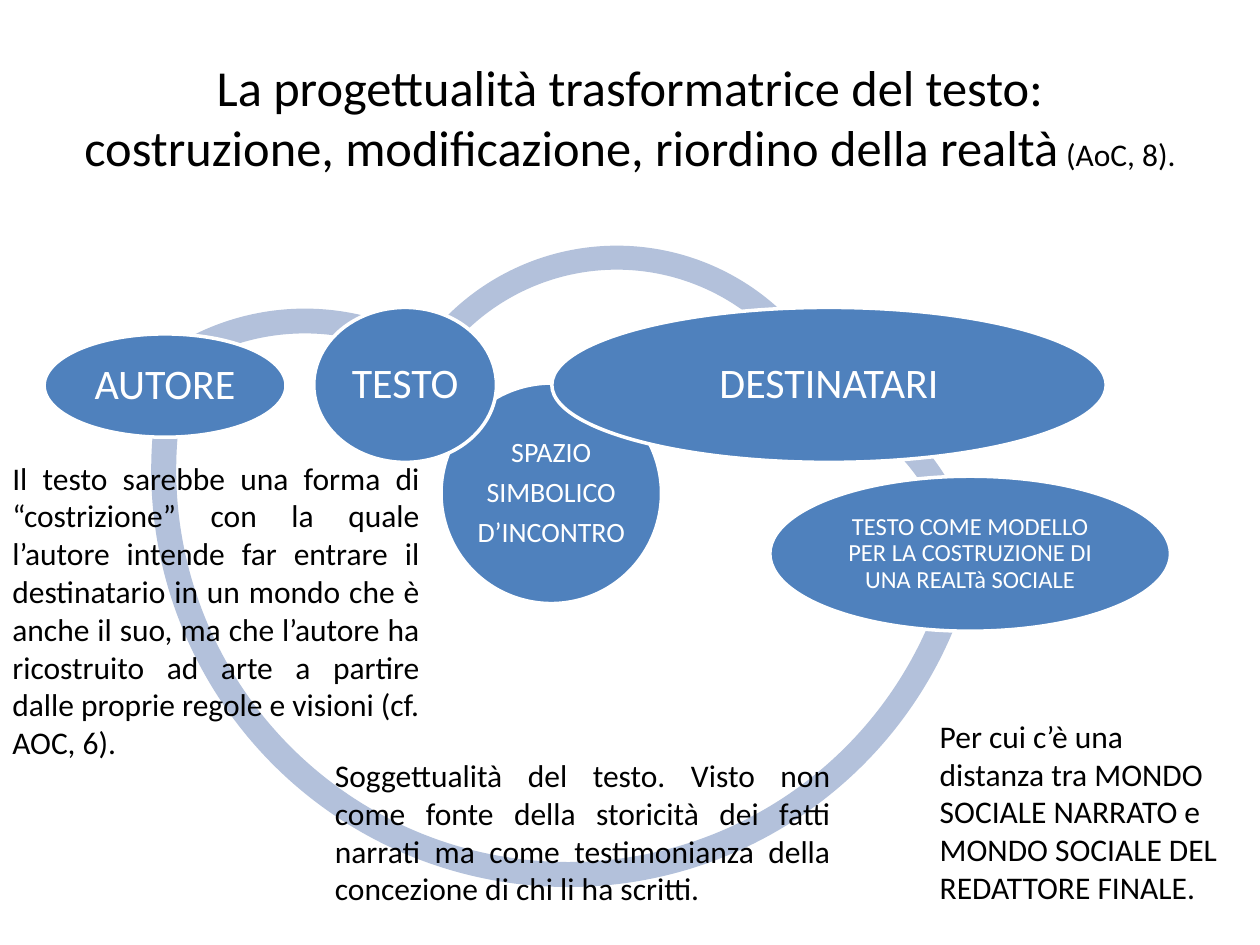
import dataclasses

import pptx
import pptx.dml.color
import pptx.enum.shapes
import pptx.enum.text
import pptx.util

EMU_PER_PX = 9144
ALIGN = pptx.enum.text.PP_ALIGN
SHAPE = pptx.enum.shapes.MSO_SHAPE


@dataclasses.dataclass(frozen=True)
class Theme:
    """Colours, font and type sizes of the deck."""
    font: str = "Calibri"
    ink: str = "000000"
    paper: str = "FFFFFF"
    node: str = "4F81BD"
    ring: str = "B3C1DB"
    title: float = 28.8
    note: float = 18
    large: float = 24
    medium: float = 16
    small: float = 14


THEME = Theme()

ARCS = [
    (10, 203, 394, (143.56, 180.44, 0.05)),
    (85, 0, 662, (7.1, 115.1, 0.03)),
    (363, 246, 381, (175.14, 208.79, 0.05)),
    (264, 153, 381, (123.18, 200.82, 0.05)),
]

NODES = [
    ((315, 262, 175, 175), ["SPAZIO", "SIMBOLICO", "D’INCONTRO"], THEME.medium, 2),
    ((214, 202, 145, 123), ["TESTO"], THEME.large, 3),
    ((403, 202, 440, 123), ["DESTINATARI"], THEME.large, 3),
    ((576, 336, 318, 123),
     ["TESTO COME MODELLO PER LA COSTRUZIONE DI UNA REALTà SOCIALE"], THEME.small, 2),
    ((0, 223, 192, 82), ["AUTORE"], THEME.large, 3),
]

NOTES = [
    ((0, 359, 343, 252), ALIGN.JUSTIFY,
     "Il testo sarebbe una forma di “costrizione” con la quale l’autore intende far "
     "entrare il destinatario in un mondo che è anche il suo, ma che l’autore ha "
     "ricostruito ad arte a partire dalle proprie regole e visioni (cf. AOC, 6)."),
    ((256, 595, 413, 131), ALIGN.JUSTIFY,
     "Soggettualità del testo. Visto non come fonte della storicità dei fatti narrati "
     "ma come testimonianza della concezione di chi li ha scritti."),
    ((736, 564, 248, 162), ALIGN.LEFT,
     "Per cui c’è una distanza tra MONDO SOCIALE NARRATO e MONDO SOCIALE DEL "
     "REDATTORE FINALE."),
]


def px(length):
    """Turn pixels into EMU."""
    return pptx.util.Emu(length * EMU_PER_PX)


def scaled(box):
    """Turn a pixel box into EMU lengths."""
    return [px(length) for length in box]


def inside(box, left, top, width, height):
    """Place a part relative to the corner of its region."""
    return scaled((box[0] + left, box[1] + top, width, height))


def colour(code):
    """Give the colour of a hex code."""
    return pptx.dml.color.RGBColor.from_string(code)


def style_font(font, size, code):
    """Set typeface, size and colour."""
    font.name = THEME.font
    font.size = pptx.util.Pt(size)
    font.color.rgb = colour(code)


def add_filled(page, kind, place, code):
    """Add a flat preset shape without outline or shadow."""
    shape = page.shapes.add_shape(kind, *place)
    shape.shadow.inherit = False
    shape.fill.solid()
    shape.fill.fore_color.rgb = colour(code)
    shape.line.fill.background()
    return shape


def fill_title(page, box):
    """Set the two-line title and its small citation."""
    title = page.shapes.title
    title.left, title.top, title.width, title.height = scaled(box)
    frame = title.text_frame
    frame.auto_size = pptx.enum.text.MSO_AUTO_SIZE.NONE
    frame.vertical_anchor = pptx.enum.text.MSO_ANCHOR.MIDDLE
    frame.text = ("La progettualità trasformatrice del testo:\v"
                  "costruzione, modificazione, riordino della realtà")
    para = frame.paragraphs[0]
    para.alignment = ALIGN.CENTER
    span = para.add_run()
    span.text = " (AoC, 8)."
    for piece in para.runs:
        style_font(piece.font, THEME.title, THEME.ink)
    span.font.size = pptx.util.Pt(THEME.note)


def add_node(page, place, lines, size, inset):
    """Add one labelled ellipse."""
    node = add_filled(page, SHAPE.OVAL, place, THEME.node)
    node.line.color.rgb = colour(THEME.paper)
    node.line.width = pptx.util.Pt(2)
    frame = node.text_frame
    frame.word_wrap = True
    frame.vertical_anchor = pptx.enum.text.MSO_ANCHOR.MIDDLE
    frame.margin_left = frame.margin_right = px(inset)
    frame.margin_top = frame.margin_bottom = px(inset)
    frame.text = "\n".join(lines)
    for para in frame.paragraphs:
        para.alignment = ALIGN.CENTER
        para.line_spacing = 0.9
        para.space_after = pptx.util.Pt(size * 0.35)
        style_font(para.font, size, THEME.paper)


def add_diagram(page, box):
    """Draw the ring arcs and the nodes over them."""
    for left, top, side, adjustments in ARCS:
        place = inside(box, left, top, side, side)
        arc = add_filled(page, SHAPE.BLOCK_ARC, place, THEME.ring)
        for index, value in enumerate(adjustments):
            arc.adjustments[index] = value
    for part, lines, size, inset in NODES:
        add_node(page, inside(box, *part), lines, size, inset)


def add_note(page, box, alignment, text):
    """Add one commentary paragraph."""
    frame = page.shapes.add_textbox(*scaled(box)).text_frame
    frame.word_wrap = True
    frame.auto_size = pptx.enum.text.MSO_AUTO_SIZE.SHAPE_TO_FIT_TEXT
    frame.text = text
    para = frame.paragraphs[0]
    para.alignment = alignment
    style_font(para.font, THEME.note, THEME.ink)


def main():
    """Build and save the deck."""
    deck = pptx.Presentation()
    deck.slide_width, deck.slide_height = px(1000), px(750)
    page = deck.slides.add_slide(deck.slide_layouts.get_by_name("Title Only"))
    fill_title(page, (50, 30, 900, 125))
    add_diagram(page, (35, 42, 894, 662))
    for box, alignment, text in NOTES:
        add_note(page, box, alignment, text)
    deck.save("out.pptx")


if __name__ == "__main__":
    main()
